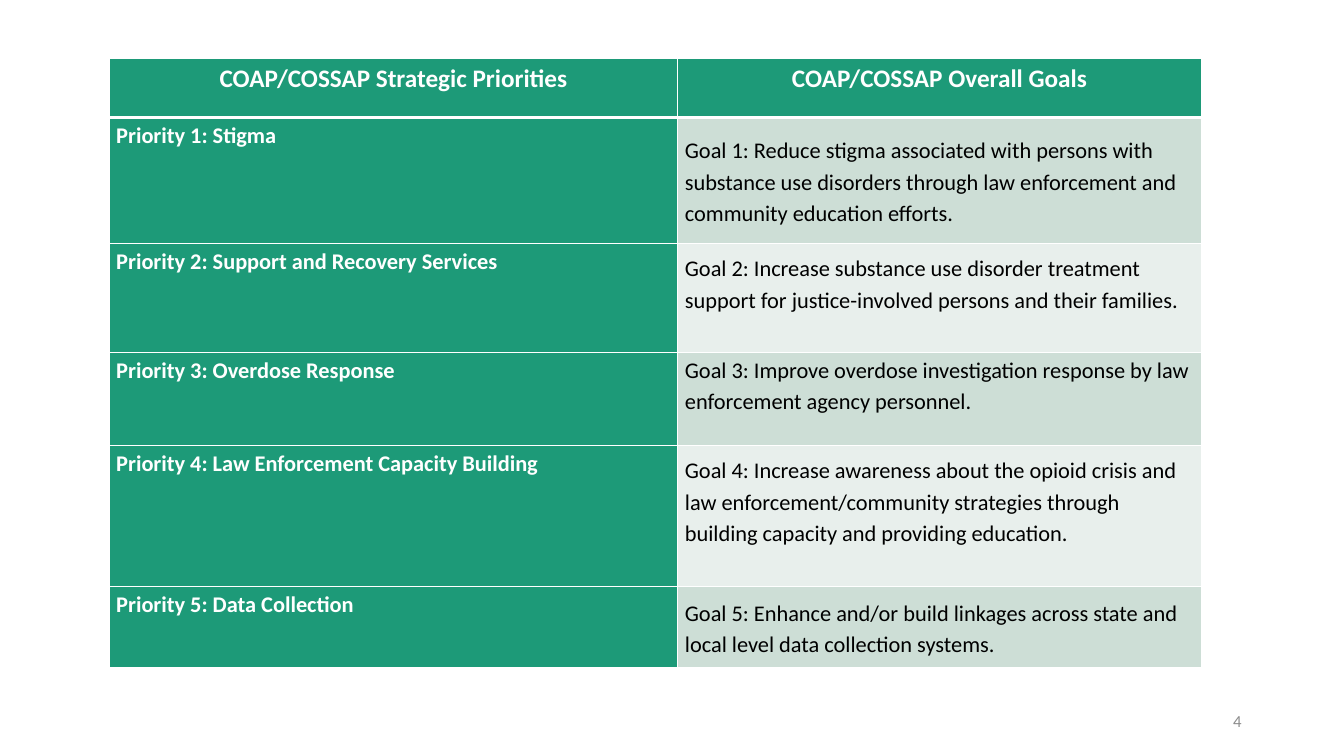
from pptx import Presentation
from pptx.dml.color import RGBColor
from pptx.enum.text import MSO_ANCHOR, PP_ALIGN
from pptx.oxml import parse_xml
from pptx.oxml.ns import nsdecls
from pptx.util import Inches, Pt

TOP, MIDDLE = MSO_ANCHOR.TOP, MSO_ANCHOR.MIDDLE
LEFT, CENTER, RIGHT = PP_ALIGN.LEFT, PP_ALIGN.CENTER, PP_ALIGN.RIGHT

GREEN = RGBColor(0x1D, 0x9A, 0x78)
SAGE = RGBColor(0xCD, 0xDE, 0xD6)
MIST = RGBColor(0xE8, 0xEF, 0xEC)
WHITE = RGBColor(0xFF, 0xFF, 0xFF)
BLACK = RGBColor(0x00, 0x00, 0x00)
GRAY = RGBColor(0x8C, 0x8C, 0x8C)

GRID_COLUMNS, GRID_ROWS = 160, 90

HEADINGS = ("COAP/COSSAP Strategic Priorities", "COAP/COSSAP Overall Goals")
# Priority, goal, and the room kept below the goal in grid rows
PRIORITIES = [
    ("Priority 1: Stigma",
     "Goal 1: Reduce stigma associated with persons with substance use "
     "disorders through law enforcement and community education efforts.", 0),
    ("Priority 2: Support and Recovery Services",
     "Goal 2: Increase substance use disorder treatment\n"
     "support for justice-involved persons and their families.", 3.7),
    ("Priority 3: Overdose Response",
     "Goal 3: Improve overdose investigation response by law enforcement "
     "agency personnel.", 3.7),
    ("Priority 4: Law Enforcement Capacity Building",
     "Goal 4: Increase awareness about the opioid crisis and law "
     "enforcement/community strategies through building capacity and "
     "providing education.", 3.7),
    ("Priority 5: Data Collection",
     "Goal 5: Enhance and/or build linkages across state and local level "
     "data collection systems.", 0),
]
COLUMN_WIDTHS = (67.7, 62.3)
ROW_HEIGHTS = (7, 15, 13, 11, 16.8, 9.6)


class SlideBuilder:
    """Places elements on one slide, measured in grid columns and rows."""

    font = "Calibri"
    line_spacing = 1.15

    def __init__(self, deck):
        self.column = deck.slide_width / GRID_COLUMNS
        self.row = deck.slide_height / GRID_ROWS
        self.slide = deck.slides.add_slide(deck.slide_layouts[6])

    def box(self, left, top, width, height):
        return (round(left * self.column), round(top * self.row),
                round(width * self.column), round(height * self.row))

    def set_text(self, frame, text, size, color, bold=False, align=LEFT,
                 spacing=line_spacing):
        frame.word_wrap = True
        frame.text = text
        for paragraph in frame.paragraphs:
            paragraph.alignment = align
            paragraph.line_spacing = spacing
            for run in paragraph.runs:
                run.font.name = self.font
                run.font.size = Pt(size)
                run.font.bold = bold
                run.font.color.rgb = color

    def label(self, area, text, size, color, align):
        frame = self.slide.shapes.add_textbox(*self.box(*area)).text_frame
        frame.vertical_anchor = MIDDLE
        self.set_text(frame, text, size, color, align=align, spacing=1.0)

    def table(self, left, top, widths, heights):
        area = self.box(left, top, sum(widths), sum(heights))
        grid = self.slide.shapes.add_table(len(heights), len(widths), *area).table
        for column, width in zip(grid.columns, widths):
            column.width = round(width * self.column)
        for row, height in zip(grid.rows, heights):
            row.height = round(height * self.row)
        return grid

    def cell(self, cell, text, fill, size, color, bold=False, align=LEFT,
             anchor=TOP, room_below=0, top_line=1, bottom_line=1):
        cell.margin_left = cell.margin_right = Inches(0.07)
        cell.margin_top = 0
        cell.margin_bottom = round(room_below * self.row)
        cell.vertical_anchor = anchor
        self.borders(cell, L=1, R=1, T=top_line, B=bottom_line)
        cell.fill.solid()
        cell.fill.fore_color.rgb = fill
        self.set_text(cell.text_frame, text, size, color, bold, align)

    def borders(self, cell, **points_by_side):
        """Adds white borders; must run before the cell gets its fill."""
        properties = cell._tc.get_or_add_tcPr()
        for side, points in points_by_side.items():
            properties.append(parse_xml(
                f'<a:ln{side} {nsdecls("a")} w="{Pt(points)}"><a:solidFill>'
                f'<a:srgbClr val="{WHITE}"/></a:solidFill></a:ln{side}>'))


def main():
    deck = Presentation()
    deck.slide_width, deck.slide_height = Inches(13.33), Inches(7.5)
    page = SlideBuilder(deck)

    page.label((113, 83.4, 36, 4.8), "4", 12, GRAY, RIGHT)

    plan = page.table(13, 7, COLUMN_WIDTHS, ROW_HEIGHTS)
    for index, heading in enumerate(HEADINGS):
        page.cell(plan.cell(0, index), heading, GREEN, 18, WHITE, bold=True,
                  align=CENTER, bottom_line=3)
    for index, (priority, goal, room_below) in enumerate(PRIORITIES, start=1):
        top_line = 3 if index == 1 else 1
        page.cell(plan.cell(index, 0), priority, GREEN, 16, WHITE, bold=True,
                  top_line=top_line)
        page.cell(plan.cell(index, 1), goal, SAGE if index % 2 else MIST, 16,
                  BLACK, anchor=MIDDLE, room_below=room_below,
                  top_line=top_line)

    deck.save("out.pptx")


if __name__ == "__main__":
    main()
